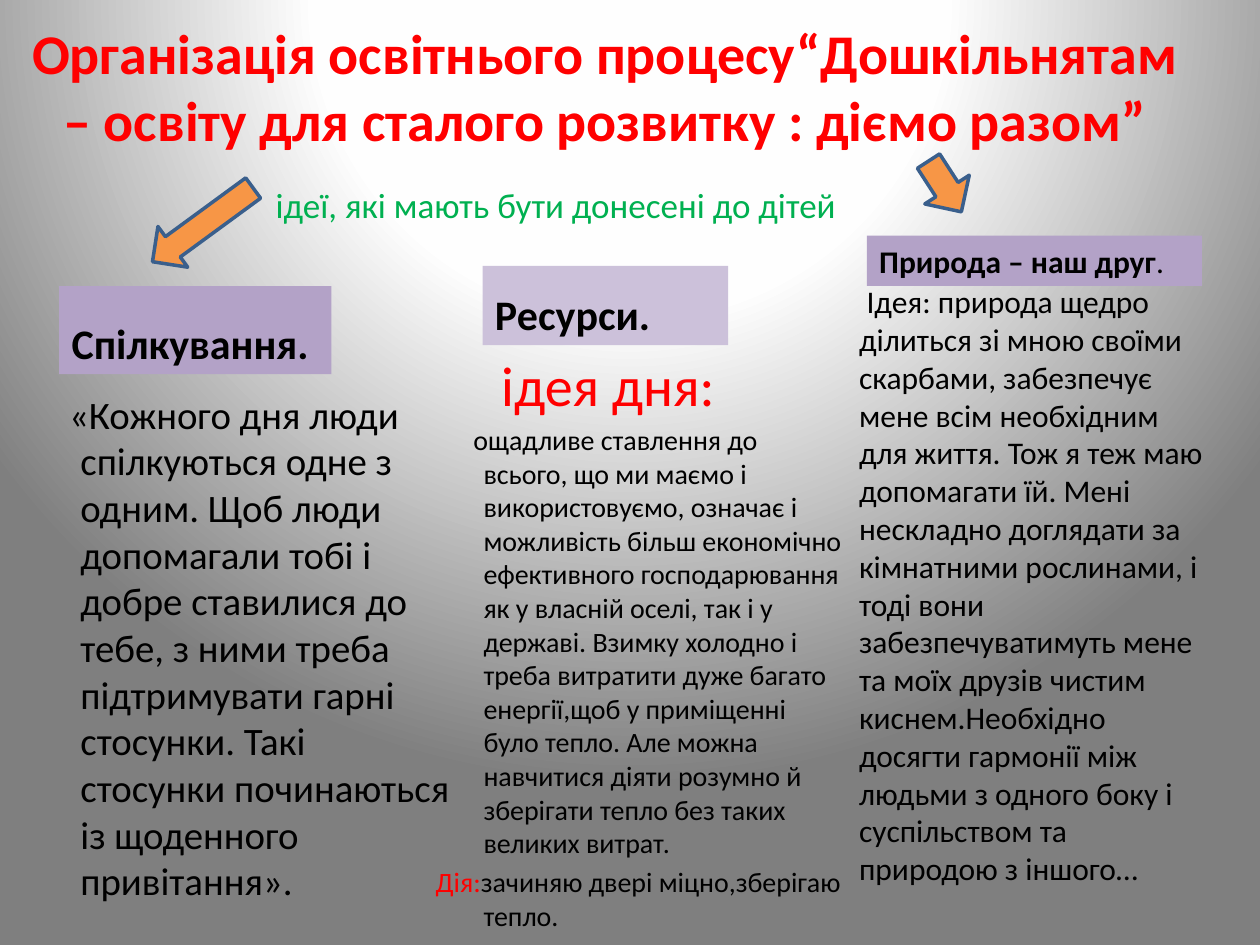
from dataclasses import dataclass
from typing import Optional

from lxml.etree import SubElement
from pptx import Presentation
from pptx.dml.color import RGBColor
from pptx.enum.shapes import MSO_SHAPE
from pptx.enum.text import MSO_ANCHOR, PP_ALIGN
from pptx.oxml import parse_xml
from pptx.oxml.ns import nsdecls, qn
from pptx.util import Inches, Pt

WIDTH, HEIGHT = 10, 7.5
BLACK, RED, GREEN = "000000", "FF0000", "00B050"
LILAC, PALE_LILAC = "B3A2C7", "CCC1DA"
ORANGE, NAVY = "F79646", "3A5F8C"
HANG = 0.38  # left margin of the hanging paragraphs, inches


@dataclass
class Run:
    text: str
    size: float
    color: str = BLACK
    bold: bool = False


@dataclass
class Para:
    runs: list[Run]
    margin: float = 0  # inches
    indent: float = 0  # inches, relative to margin
    before: float = 0  # points


@dataclass
class Box:
    """A text block; x, y, w, h are percentages of the slide's size."""
    x: float
    y: float
    w: float
    h: float
    paras: list[Para]
    fill: Optional[str] = None
    anchor: MSO_ANCHOR = MSO_ANCHOR.TOP
    align: PP_ALIGN = PP_ALIGN.LEFT


@dataclass
class Arrow:
    x: float
    y: float
    w: float
    h: float
    rotation: float


def rgb(color: str) -> RGBColor:
    return RGBColor.from_string(color)


def frame(b) -> tuple:
    return (Inches(b.x * WIDTH / 100), Inches(b.y * HEIGHT / 100),
            Inches(b.w * WIDTH / 100), Inches(b.h * HEIGHT / 100))


def draw_box(s, box: Box) -> None:
    if box.fill:
        sp = s.shapes.add_shape(MSO_SHAPE.RECTANGLE, *frame(box))
        sp.shadow.inherit = False
        sp.fill.solid()
        sp.fill.fore_color.rgb = rgb(box.fill)
        sp.line.fill.background()
    else:
        sp = s.shapes.add_textbox(*frame(box))
    tf = sp.text_frame
    tf.word_wrap = True
    tf.vertical_anchor = box.anchor
    for i, para in enumerate(box.paras):
        p = tf.add_paragraph() if i else tf.paragraphs[0]
        p.alignment = box.align
        p.space_before = Pt(para.before)
        pPr = p._p.get_or_add_pPr()
        pPr.set("marL", str(Inches(para.margin)))
        pPr.set("indent", str(Inches(para.indent)))
        for run in para.runs:
            r = p.add_run()
            r.text = run.text
            r.font.name = "Calibri"
            r.font.size = Pt(run.size)
            r.font.bold = run.bold
            r.font.color.rgb = rgb(run.color)


def draw_arrow(s, arrow: Arrow) -> None:
    sp = s.shapes.add_shape(MSO_SHAPE.DOWN_ARROW, *frame(arrow))
    sp.shadow.inherit = False
    sp.rotation = arrow.rotation
    sp.fill.solid()
    sp.fill.fore_color.rgb = rgb(ORANGE)
    sp.line.color.rgb = rgb(NAVY)
    sp.line.width = Pt(2)


def set_background(s) -> None:
    """Radial gradient, lit from above the slide."""
    fill = s.background.fill
    fill.solid()
    fill.fore_color.rgb = rgb("FFFFFF")
    bgPr = s._element.cSld.find(qn("p:bg")).find(qn("p:bgPr"))
    grad = parse_xml(f'<a:gradFill {nsdecls("a")} rotWithShape="1"/>')
    stops = SubElement(grad, qn("a:gsLst"))
    for pos, color in ((0, "FFFFFF"), (40, "FEFEFE"), (100, "7F7F7F")):
        stop = SubElement(stops, qn("a:gs"), pos=str(pos * 1000))
        SubElement(stop, qn("a:srgbClr"), val=color)
    circle = SubElement(grad, qn("a:path"), path="circle")
    SubElement(circle, qn("a:fillToRect"),
               l="50000", t="-80000", r="50000", b="180000")
    bgPr.replace(bgPr.find(qn("a:solidFill")), grad)


BOXES = [
    # Title and subtitle
    Box(0, 1.33, 96.1, 16.67, [Para([Run(
        "Організація освітнього процесу“Дошкільнятам – освіту для сталого "
        "розвитку : діємо разом”", 32, RED, True)])], align=PP_ALIGN.CENTER),
    Box(20.3, 18.8, 50, 5.87, [Para([Run(
        "ідеї, які мають бути донесені до дітей", 20, GREEN)], indent=0.06)]),
    # Communication
    Box(4.7, 30.27, 21.6, 9.33, [Para([Run("Спілкування.", 24, bold=True)])],
        LILAC, MSO_ANCHOR.BOTTOM),
    Box(1.6, 40.67, 35.6, 46.13, [Para([Run(
        "«Кожного дня люди спілкуються одне з одним. Щоб люди допомагали тобі "
        "і добре ставилися до тебе, з ними треба підтримувати гарні стосунки. "
        "Такі стосунки починаються із щоденного привітання».", 22.2)],
        HANG, -0.09)]),
    # Resources
    Box(38.3, 28.13, 19.5, 8.4, [Para([Run("Ресурси.", 24, bold=True)])],
        PALE_LILAC, MSO_ANCHOR.BOTTOM),
    Box(33.6, 36.4, 34.4, 57.6, [
        Para([Run("ідея дня:", 32, RED)], HANG, 0.14),
        Para([Run(
            "ощадливе ставлення до всього, що ми маємо і використовуємо, "
            "означає і можливість більш економічно ефективного господарювання "
            "як у власній оселі, так і у державі. Взимку холодно і треба "
            "витратити дуже багато енергії,щоб у приміщенні було тепло. Але "
            "можна навчитися діяти розумно й зберігати тепло без таких "
            "великих витрат.", 16)], HANG, -0.08, 3),
        Para([Run("Дія:", 16, RED),
              Run("зачиняю двері міцно,зберігаю тепло.", 16)], HANG, -HANG, 3),
    ]),
    # Nature
    Box(68.8, 24.93, 26.6, 5.33, [Para([
        Run("Природа – наш друг", 18, bold=True), Run(".", 18)])], LILAC),
    Box(67.2, 29.2, 29.7, 66, [Para([Run(
        "Ідея: природа щедро ділиться зі мною своїми скарбами, забезпечує мене "
        "всім необхідним для життя. Тож я теж маю допомагати їй. Мені "
        "нескладно доглядати за кімнатними рослинами, і тоді вони "
        "забезпечуватимуть мене та моїх друзів чистим киснем.Необхідно досягти "
        "гармонії між людьми з одного боку і суспільством та природою з "
        "іншого…", 18)], indent=0.06)]),
]

ARROWS = [Arrow(14.1, 17.2, 4, 13.2, 53.8), Arrow(72.9, 16.53, 4.2, 6.4, 327.1)]


def main() -> None:
    prs = Presentation()
    prs.slide_width, prs.slide_height = Inches(WIDTH), Inches(HEIGHT)
    s = prs.slides.add_slide(prs.slide_layouts[6])
    set_background(s)
    for box in BOXES:
        draw_box(s, box)
    for arrow in ARROWS:
        draw_arrow(s, arrow)
    prs.save("out.pptx")


if __name__ == "__main__":
    main()
